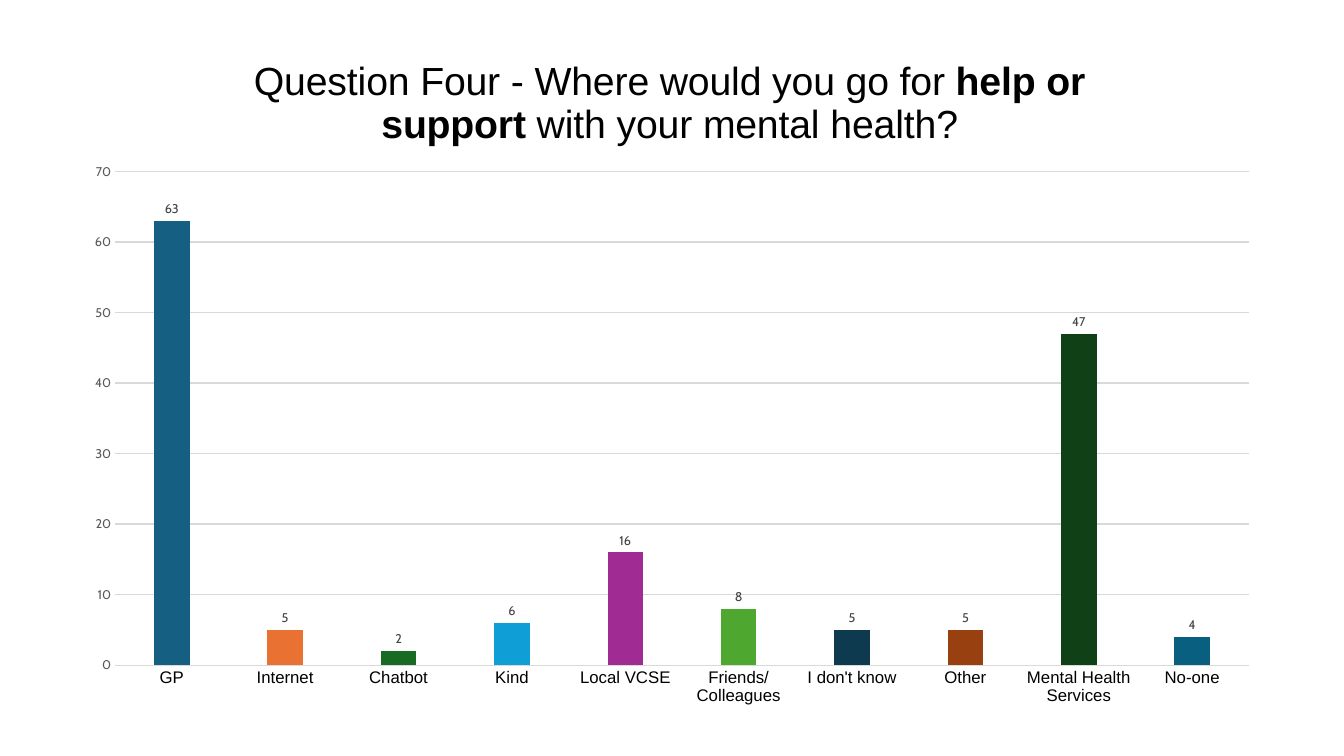
"""Build the survey slide showing where people go for mental health support."""
from lxml import etree
from pptx import Presentation
from pptx.chart.data import CategoryChartData
from pptx.dml.color import RGBColor
from pptx.enum.chart import XL_CHART_TYPE, XL_LABEL_POSITION, XL_TICK_MARK
from pptx.oxml.ns import qn
from pptx.util import Cm, Pt

COLUMN = XL_CHART_TYPE.COLUMN_CLUSTERED
OUTSIDE_END = XL_LABEL_POSITION.OUTSIDE_END
NO_TICK = XL_TICK_MARK.NONE

BLACK = RGBColor(0x00, 0x00, 0x00)
AXIS_GREY = RGBColor(0x59, 0x59, 0x59)
LABEL_GREY = RGBColor(0x40, 0x40, 0x40)
GRID_GREY = RGBColor(0xD9, 0xD9, 0xD9)
BLUE = RGBColor(0x15, 0x60, 0x82)
ORANGE = RGBColor(0xE9, 0x71, 0x32)
GREEN = RGBColor(0x19, 0x6B, 0x24)
SKY = RGBColor(0x0F, 0x9E, 0xD5)
PURPLE = RGBColor(0xA0, 0x2B, 0x93)
LIME = RGBColor(0x4E, 0xA7, 0x2E)
NAVY = RGBColor(0x0D, 0x3A, 0x4E)
BROWN = RGBColor(0x99, 0x40, 0x10)
FOREST = RGBColor(0x0F, 0x40, 0x16)
TEAL = RGBColor(0x09, 0x5F, 0x80)

ANSWERS = [
    ("GP", 63, BLUE),
    ("Internet", 5, ORANGE),
    ("Chatbot", 2, GREEN),
    ("Kind", 6, SKY),
    ("Local VCSE", 16, PURPLE),
    ("Friends/Colleagues", 8, LIME),
    ("I don't know", 5, NAVY),
    ("Other", 5, BROWN),
    ("Mental Health Services", 47, FOREST),
    ("No-one", 4, TEAL),
]
QUESTION = [
    ("Question Four - Where would you go for ", False),
    ("help or support", True),
    (" with your mental health?", False),
]


def style_font(font, size, color, name):
    font.size = Pt(size)
    font.color.rgb = color
    font.name = name


def place(parent, index, **settings):
    for old_layout in parent.findall(qn("c:layout")):
        parent.remove(old_layout)
    layout = etree.Element(qn("c:layout"))
    manual = etree.SubElement(layout, qn("c:manualLayout"))
    for tag, value in settings.items():
        etree.SubElement(manual, qn(f"c:{tag}")).set("val", str(value))
    parent.insert(index, layout)


presentation = Presentation()
presentation.slide_width = Cm(33.87)
presentation.slide_height = Cm(19.05)
slide = presentation.slides.add_slide(presentation.slide_layouts[6])

answer_data = CategoryChartData()
answer_data.categories = [answer for answer, count, color in ANSWERS]
answer_data.add_series("Series 1", [count for answer, count, color in ANSWERS])
chart = slide.shapes.add_chart(
    COLUMN, Cm(1.78), Cm(0.89), Cm(30.3), Cm(17.25), answer_data
).chart
style_font(chart.font, 10, BLACK, "Cabin")
chart.has_legend = False

question = chart.chart_title.text_frame.paragraphs[0]
for words, is_bold in QUESTION:
    run = question.add_run()
    run.text = words
    style_font(run.font, 28, BLACK, "Arial")
    run.font.bold = is_bold
chart.chart_title.include_in_layout = False
place(chart.chart_title._element, 1, xMode="edge", yMode="edge", x=0.15, y=0.03)
place(chart.plots[0]._element.getparent(), 0, layoutTarget="inner",
      xMode="edge", yMode="edge", x=0.037, y=0.199, w=0.943, h=0.721)

answer_axis = chart.category_axis
style_font(answer_axis.tick_labels.font, 12, BLACK, "Arial")
answer_axis.format.line.color.rgb = GRID_GREY
answer_axis.format.line.width = Pt(0.75)

count_axis = chart.value_axis
style_font(count_axis.tick_labels.font, 9, AXIS_GREY, "Cabin")
count_axis.minimum_scale = 0
count_axis.maximum_scale = 70
count_axis.major_unit = 10
count_axis.format.line.fill.background()
count_axis.major_gridlines.format.line.color.rgb = GRID_GREY
count_axis.major_gridlines.format.line.width = Pt(0.75)

for axis in (answer_axis, count_axis):
    axis.major_tick_mark = NO_TICK
    axis.minor_tick_mark = NO_TICK

columns = chart.plots[0]
columns.gap_width = 219
columns.overlap = -27
columns.vary_by_categories = False
columns.has_data_labels = True
columns.data_labels.show_value = True
columns.data_labels.position = OUTSIDE_END
style_font(columns.data_labels.font, 9, LABEL_GREY, "Cabin")

for index, (answer, count, color) in enumerate(ANSWERS):
    column_fill = columns.series[0].points[index].format.fill
    column_fill.solid()
    column_fill.fore_color.rgb = color

presentation.save("out.pptx")
